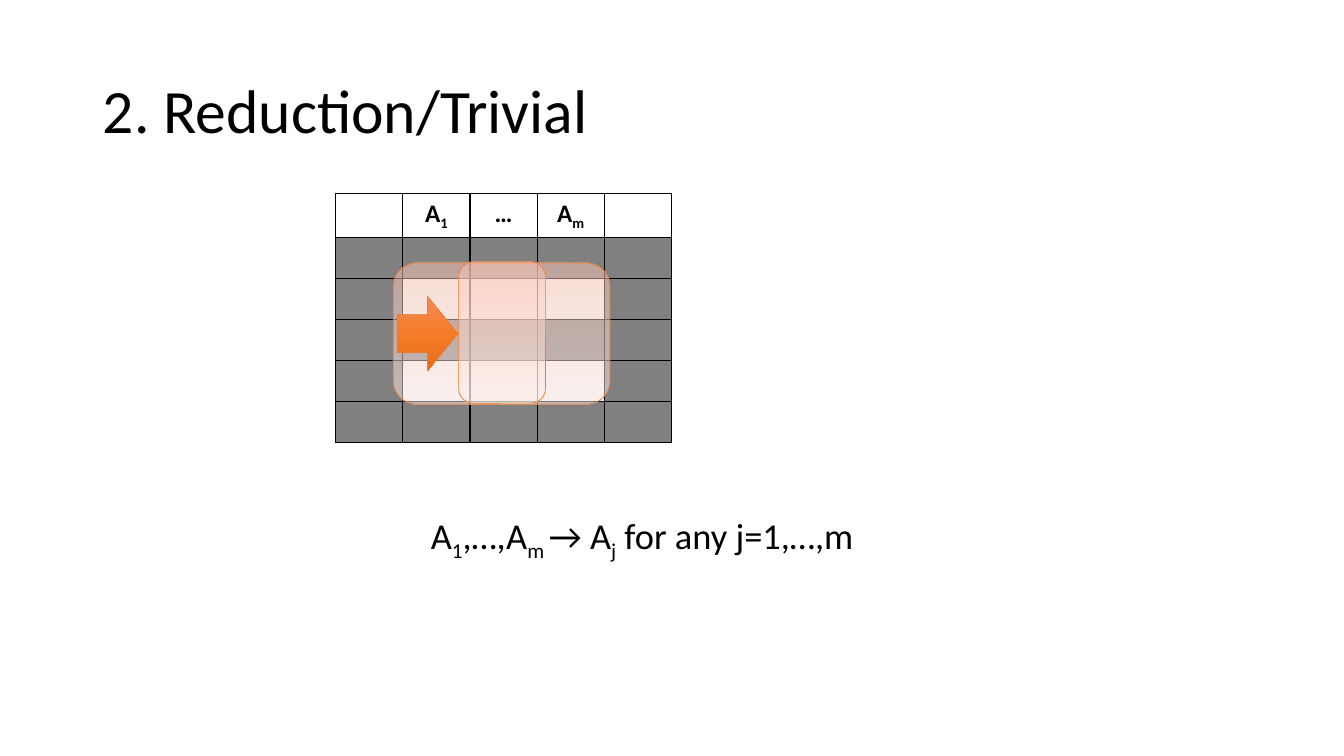
from pptx import Presentation
from pptx import util as u
from pptx.dml.color import RGBColor
from pptx.enum import shapes, text
from pptx.oxml import parse_xml
from pptx.oxml.ns import nsdecls, qn

PX = 9144  # 100 px to the inch
FONT = "Calibri"
BLACK, WHITE, GREY, LIGHT, ORANGE = "000000", "FFFFFF", "808080", "F2F2F2", "ED7D31"
PEACH_STOPS = [(0, "FFC7B6"), (35, "FFD7CB"), (100, "FFF0EB")]
ORANGE_STOPS = [(0, "F18C57"), (50, "F67B28"), (100, "E56C19")]


def px(*lengths):
    return [u.Emu(length * PX) for length in lengths]


def color(value):
    return RGBColor.from_string(value)


def add_runs(paragraph, parts, size, bold=False):
    """Add runs, lowering every second part to a subscript."""
    for index, part in enumerate(parts):
        run = paragraph.add_run()
        run.text = part
        font = run.font
        font.name, font.size, font.bold = FONT, u.Pt(size), bold
        font.color.rgb = color(BLACK)
        if index % 2:
            font._element.set("baseline", "-25000")


def add_title(slide, box):
    title = slide.shapes.title
    title.left, title.top, title.width, title.height = px(*box)
    frame = title.text_frame
    frame.vertical_anchor = text.MSO_ANCHOR.MIDDLE
    frame.auto_size = text.MSO_AUTO_SIZE.NONE
    paragraph = frame.paragraphs[0]
    paragraph.alignment = text.PP_ALIGN.LEFT
    paragraph.line_spacing = 0.9
    add_runs(paragraph, ["2. Reduction/Trivial"], 44)


def add_borders(cell):
    properties = cell._tc.get_or_add_tcPr()
    for side in "LRTB":
        properties.append(parse_xml(
            f'<a:ln{side} {nsdecls("a")} w="12700"><a:solidFill>'
            f'<a:srgbClr val="{BLACK}"/></a:solidFill></a:ln{side}>'))


def add_relation(slide, box):
    headings = [[], ["A", "1"], ["…"], ["A", "m"], []]
    rows, columns = 6, len(headings)
    table = slide.shapes.add_table(rows, columns, *px(*box)).table
    table.first_row = table.horz_banding = False
    for row in range(rows):
        for column, heading in enumerate(headings):
            cell = table.cell(row, column)
            add_borders(cell)
            cell.fill.solid()
            if row == 0:
                fill = WHITE
                paragraph = cell.text_frame.paragraphs[0]
                paragraph.alignment = text.PP_ALIGN.CENTER
                add_runs(paragraph, heading, 18, bold=True)
            else:
                tuple_cell = row in (2, 4) and 0 < column < columns - 1
                fill = LIGHT if tuple_cell else GREY
            cell.fill.fore_color.rgb = color(fill)


def add_gradient_shape(slide, kind, box, stops, opacity=100):
    shape = slide.shapes.add_shape(kind, *px(*box))
    shape.shadow.inherit = False
    shape.line.color.rgb = color(ORANGE)
    shape.line.width = u.Pt(0.5)
    stop_xml = "".join(
        f'<a:gs pos="{place * 1000}"><a:srgbClr val="{value}">'
        f'<a:alpha val="{opacity * 1000}"/></a:srgbClr></a:gs>'
        for place, value in stops)
    gradient = parse_xml(
        f'<a:gradFill {nsdecls("a")} rotWithShape="1"><a:gsLst>{stop_xml}</a:gsLst>'
        '<a:lin ang="5400000" scaled="0"/></a:gradFill>')
    shape._element.spPr.find(qn("a:prstGeom")).addnext(gradient)


def add_highlights(slide, box):
    """Mark all attributes, then one of them, with an arrow leading to it."""
    left, top, width, height = box
    rounded = shapes.MSO_SHAPE.ROUNDED_RECTANGLE
    add_gradient_shape(slide, rounded, box, PEACH_STOPS, 50)
    add_gradient_shape(slide, rounded, (left + 65, top - 1, 86, height), PEACH_STOPS, 50)
    add_gradient_shape(slide, shapes.MSO_SHAPE.RIGHT_ARROW,
                       (left + 4, top + 33, 60, 74), ORANGE_STOPS)


def add_rule(slide, box):
    frame = slide.shapes.add_textbox(*px(*box)).text_frame
    frame.word_wrap = True
    frame.auto_size = text.MSO_AUTO_SIZE.SHAPE_TO_FIT_TEXT
    paragraph = frame.paragraphs[0]
    paragraph.alignment = text.PP_ALIGN.CENTER
    add_runs(paragraph, ["A", "1", ",…,A", "m ", "→ A", "j", " for any j=1,…,m"], 26)


def main():
    presentation = Presentation()
    presentation.slide_width, presentation.slide_height = px(1333, 750)
    slide = presentation.slides.add_slide(presentation.slide_layouts[5])
    add_title(slide, (92, 40, 1150, 145))
    add_relation(slide, (333, 192, 333, 243))
    add_rule(slide, (350, 504, 574, 54))
    add_highlights(slide, (390, 261, 215, 140))
    presentation.save("out.pptx")


if __name__ == "__main__":
    main()
